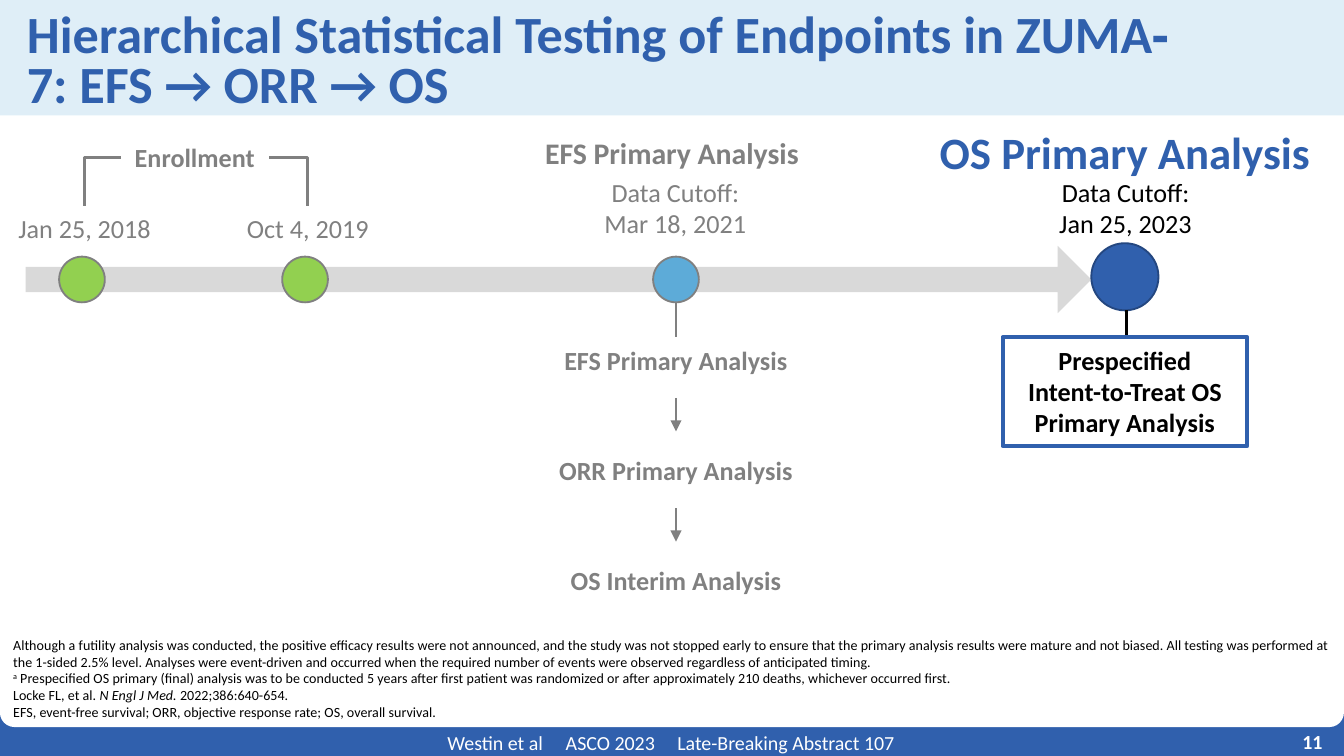
from dataclasses import dataclass

from lxml.etree import SubElement
from pptx import Presentation
from pptx.dml.color import RGBColor
from pptx.enum.shapes import MSO_CONNECTOR, MSO_SHAPE
from pptx.enum.text import MSO_ANCHOR, PP_ALIGN
from pptx.oxml.ns import qn
from pptx.util import Inches, Pt

NO_BREAK_SPACE = chr(160)


@dataclass(frozen=True)
class Theme:
    font: str = "Calibri"
    blue: str = "3060AD"
    dark_blue: str = "244780"
    sky: str = "5DABD8"
    pale: str = "DFEEF7"
    green: str = "92D050"
    gray: str = "808080"
    light_gray: str = "D9D9D9"
    black: str = "000000"
    white: str = "FFFFFF"
    title: float = 28
    emphasis: float = 24
    heading: float = 16
    body: float = 14
    footer: float = 10.7
    note: float = 7.5


THEME = Theme()


@dataclass(frozen=True)
class Box:
    left: float
    top: float
    width: float
    height: float

    def lengths(self):
        return [Inches(v) for v in (self.left, self.top, self.width, self.height)]


@dataclass(frozen=True)
class Label:
    text: str
    box: Box
    size: float = THEME.body
    color: str = THEME.gray
    bold: bool = False
    wrap: bool = False
    align: PP_ALIGN = PP_ALIGN.CENTER
    anchor: MSO_ANCHOR = MSO_ANCHOR.TOP


@dataclass(frozen=True)
class Milestone:
    box: Box
    fill: str
    outline: str = THEME.gray


def rgb(color: str) -> RGBColor:
    return RGBColor.from_string(color)


def style_text(frame, size: float, color: str, bold: bool, align: PP_ALIGN) -> None:
    for paragraph in frame.paragraphs:
        paragraph.alignment = align
        for run in paragraph.runs:
            run.font.name = THEME.font
            run.font.size = Pt(size)
            run.font.bold = bold
            run.font.color.rgb = rgb(color)


def add_label(slide, label: Label):
    frame = slide.shapes.add_textbox(*label.box.lengths()).text_frame
    frame.word_wrap = label.wrap
    frame.vertical_anchor = label.anchor
    frame.text = label.text
    style_text(frame, label.size, label.color, label.bold, label.align)
    return frame


def style_outline(shape, color: str | None, width: float) -> None:
    if color is None:
        shape.line.fill.background()
    else:
        shape.line.color.rgb = rgb(color)
        shape.line.width = Pt(width)


def add_block(slide, kind, box: Box, fill: str | None, outline: str | None = None,
              width: float = 1, adjustments: tuple[float, ...] = ()):
    block = slide.shapes.add_shape(kind, *box.lengths())
    block.shadow.inherit = False
    for index, value in enumerate(adjustments):
        block.adjustments[index] = value
    if fill is None:
        block.fill.background()
    else:
        block.fill.solid()
        block.fill.fore_color.rgb = rgb(fill)
    style_outline(block, outline, width)
    return block


def add_stem(slide, x: float, top: float, bottom: float, color: str,
             arrow: bool = False) -> None:
    """Draw a vertical line, with an arrowhead at the bottom if asked."""
    stem = slide.shapes.add_connector(
        MSO_CONNECTOR.STRAIGHT, Inches(x), Inches(top), Inches(x), Inches(bottom))
    style_outline(stem, color, 1.5)
    if arrow:
        SubElement(stem.line._get_or_add_ln(), qn("a:tailEnd"), type="triangle")
    SubElement(stem._element.spPr, qn("a:effectLst"))


def add_bracket(slide, outer_x: float, inner_x: float) -> None:
    top, bottom = 1.17, 1.53
    builder = slide.shapes.build_freeform(Inches(outer_x), Inches(bottom))
    builder.add_line_segments(
        [(Inches(outer_x), Inches(top)), (Inches(inner_x), Inches(top))], close=False)
    bracket = builder.convert_to_shape()
    bracket.shadow.inherit = False
    bracket.fill.background()
    style_outline(bracket, THEME.gray, 1.5)


def add_frame(slide) -> None:
    """Draw the footer band, white page and title."""
    add_block(slide, MSO_SHAPE.RECTANGLE, Box(0, 5.06, 10, 0.57), THEME.blue)
    add_block(slide, MSO_SHAPE.ROUND_2_SAME_RECTANGLE, Box(0, 0, 10, 5.41),
              THEME.white, adjustments=(0, 0.02))
    credit = add_label(slide, Label(
        "Westin et al\tASCO 2023\tLate-Breaking Abstract 107", Box(3.33, 5.42, 4, 0.21),
        THEME.footer, THEME.white, wrap=True, align=PP_ALIGN.LEFT,
        anchor=MSO_ANCHOR.MIDDLE))
    credit.margin_left = credit.margin_right = credit.margin_top = credit.margin_bottom = 0
    tabs = SubElement(credit.paragraphs[0]._p.get_or_add_pPr(), qn("a:tabLst"))
    for stop in (0.88, 1.71):
        SubElement(tabs, qn("a:tab"), pos=str(Inches(stop)), algn="l")
    add_label(slide, Label("11", Box(9.31, 5.37, 0.63, 0.3), THEME.footer, THEME.white,
                           True, align=PP_ALIGN.RIGHT, anchor=MSO_ANCHOR.MIDDLE))

    title = add_block(slide, MSO_SHAPE.RECTANGLE, Box(0, 0, 10, 0.86), THEME.pale).text_frame
    title.word_wrap = True
    title.vertical_anchor = MSO_ANCHOR.TOP
    title.margin_left = title.margin_right = Inches(0.2)
    title.margin_top, title.margin_bottom = Inches(0.1), 0
    title.text = NO_BREAK_SPACE.join((
        "Hierarchical Statistical Testing of Endpoints in ZUMA‐7:", "EFS", "→ ORR → OS"))
    title.paragraphs[0].line_spacing = 0.8
    style_text(title, THEME.title, THEME.blue, True, PP_ALIGN.LEFT)


def add_footnotes(slide) -> None:
    notes = add_label(slide, Label(
        "Although a futility analysis was conducted, the positive efficacy results were not "
        "announced, and the study was not stopped early to ensure that the primary analysis "
        "results were mature and not biased. All testing was performed at the 1-sided 2.5% "
        "level. Analyses were event-driven and occurred when the required number of events "
        "were observed regardless of anticipated timing.\n"
        "a\nLocke FL, et al. \n"
        "EFS, event-free survival; ORR, objective response rate; OS, overall survival.",
        Box(0, 4.68, 10, 0.73), THEME.note, THEME.black, wrap=True,
        align=PP_ALIGN.LEFT, anchor=MSO_ANCHOR.BOTTOM))
    _, prespecified, citation, _ = notes.paragraphs
    prespecified.add_run().text = (
        " Prespecified OS primary (final) analysis was to be conducted 5 years after first "
        "patient was randomized or after approximately 210 deaths, whichever occurred first.")
    for part in ("N Engl J Med. ", "2022;386:640-654."):
        citation.add_run().text = part
    style_text(notes, THEME.note, THEME.black, False, PP_ALIGN.LEFT)
    prespecified.runs[0].font._element.set("baseline", "30000")
    citation.runs[1].font.italic = True


def add_timeline(slide) -> None:
    add_block(slide, MSO_SHAPE.RIGHT_ARROW, Box(0.19, 1.83, 7.93, 0.5),
              THEME.light_gray, adjustments=(0.375, 0.5))
    for milestone in (
        Milestone(Box(0.44, 1.91, 0.34, 0.34), THEME.green),
        Milestone(Box(2.1, 1.91, 0.34, 0.34), THEME.green),
        Milestone(Box(4.86, 1.91, 0.34, 0.34), THEME.sky),
        Milestone(Box(8.12, 1.81, 0.5, 0.5), THEME.blue, THEME.dark_blue),
    ):
        add_block(slide, MSO_SHAPE.OVAL, milestone.box, milestone.fill, milestone.outline)
    for label in (
        Label("Enrollment", Box(0.9, 1, 1.1, 0.34), bold=True),
        Label("Jan 25, 2018", Box(0.03, 1.53, 1.2, 0.34)),
        Label("Oct 4, 2019", Box(1.73, 1.53, 1.12, 0.34)),
        Label("EFS Primary Analysis", Box(3.94, 0.95, 2.12, 0.37), THEME.heading, bold=True),
        Label("Data Cutoff: Mar 18, 2021", Box(4.38, 1.26, 1.29, 0.57), wrap=True),
        Label("OS Primary Analysis", Box(6.82, 0.88, 3.1, 0.5), THEME.emphasis,
              THEME.blue, True),
        Label("Data Cutoff: Jan 25, 2023", Box(7.73, 1.26, 1.29, 0.57),
              color=THEME.black, wrap=True),
    ):
        add_label(slide, label)
    add_bracket(slide, 0.63, 0.9)
    add_bracket(slide, 2.29, 2)


def add_analyses(slide) -> None:
    """Draw the testing sequence and the prespecified final analysis."""
    axis, first_top, step = 5.03, 2.51, 0.82
    add_stem(slide, axis, 2.25, first_top, THEME.gray)
    endpoints = ("EFS Primary Analysis", "ORR Primary Analysis", "OS Interim Analysis")
    for index, endpoint in enumerate(endpoints):
        top = first_top + index * step
        add_label(slide, Label(endpoint, Box(axis - 1, top, 2, 0.34), bold=True, wrap=True))
        if index < len(endpoints) - 1:
            add_stem(slide, axis, top + 0.45, top + 0.7, THEME.gray, arrow=True)

    add_stem(slide, 8.38, 2.31, 2.49, THEME.black)
    final = add_block(slide, MSO_SHAPE.RECTANGLE, Box(7.46, 2.51, 1.82, 0.81), None,
                      THEME.blue, 2.25).text_frame
    final.word_wrap = True
    final.vertical_anchor = MSO_ANCHOR.TOP
    final.text = "Prespecified\nIntent-to-Treat OS Primary" + NO_BREAK_SPACE + "Analysis"
    style_text(final, THEME.body, THEME.black, True, PP_ALIGN.CENTER)


def main() -> None:
    deck = Presentation()
    deck.slide_width = Inches(10)
    deck.slide_height = deck.slide_width * 9 // 16
    slide = deck.slides.add_slide(deck.slide_layouts[6])
    add_frame(slide)
    add_footnotes(slide)
    add_timeline(slide)
    add_analyses(slide)
    deck.save("out.pptx")


if __name__ == "__main__":
    main()
